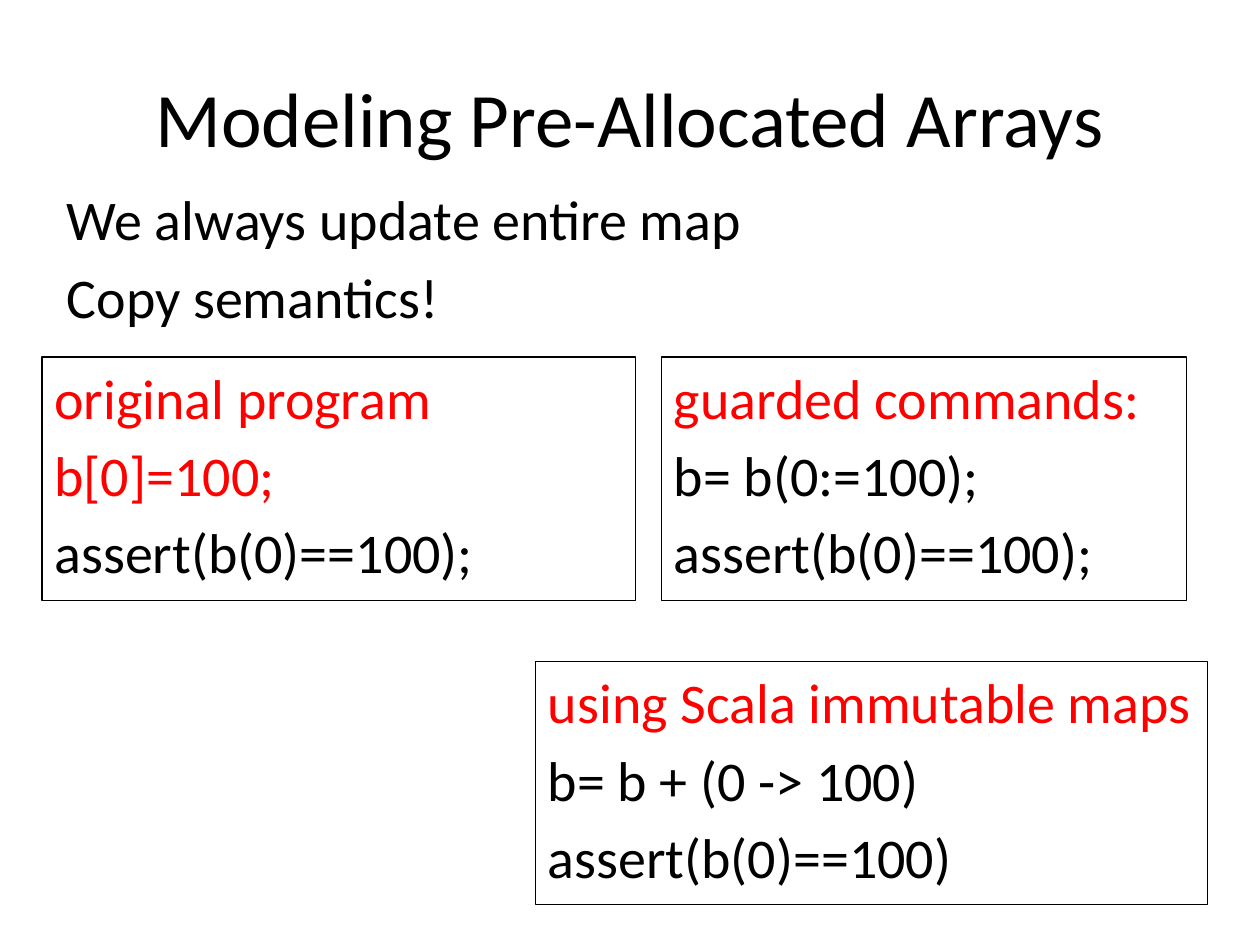
from pptx import Presentation
from pptx.dml.color import RGBColor
from pptx.enum.shapes import MSO_SHAPE as Shape
from pptx.enum.text import MSO_ANCHOR as Anchor, PP_ALIGN as Align
from pptx.util import Pt

# Content: each line is (text, colour name)
TITLE = [("Modeling Pre-Allocated Arrays", "text")]
INTRO = [("We always update entire map", "text"), ("Copy semantics!", "text")]
CODE_BOXES = [  # left, top, width, lines
    (378, 204, 300, [("guarded commands:", "accent"),
                     ("b= b(0:=100);", "text"),
                     ("assert(b(0)==100);", "text")]),
    (24, 204, 339, [("original program", "accent"),
                    ("b[0]=100;", "accent"),
                    ("assert(b(0)==100);", "text")]),
    (306, 378, 384, [("using Scala immutable maps", "accent"),
                     ("b= b + (0 -> 100)", "text"),
                     ("assert(b(0)==100)", "text")]),
]
CODE_HEIGHT = 139

THEME = {
    "font": "Calibri",
    "title_size": 44,
    "body_size": 32,
    "space_before": 5.8,
    "line_width": 0.75,
    "text": RGBColor(0, 0, 0),
    "accent": RGBColor(255, 0, 0),
}


def write_lines(shape, lines, size, space=0, align=Align.LEFT, anchor=Anchor.TOP):
    frame = shape.text_frame
    frame.word_wrap = True
    frame.vertical_anchor = anchor
    frame.text = "\n".join(text for text, _ in lines)
    for paragraph, (_, colour) in zip(frame.paragraphs, lines):
        paragraph.alignment = align
        paragraph.space_before = Pt(space)
        font = paragraph.runs[0].font
        font.name = THEME["font"]
        font.size = Pt(size)
        font.color.rgb = THEME[colour]


def add_code_box(slide, left, top, width, lines):
    shape = slide.shapes.add_shape(
        Shape.RECTANGLE, Pt(left), Pt(top), Pt(width), Pt(CODE_HEIGHT))
    shape.shadow.inherit = False
    shape.fill.background()
    shape.line.color.rgb = THEME["text"]
    shape.line.width = Pt(THEME["line_width"])
    write_lines(shape, lines, THEME["body_size"], THEME["space_before"])


def main():
    presentation = Presentation()
    presentation.slide_width, presentation.slide_height = Pt(720), Pt(540)
    slide = presentation.slides.add_slide(presentation.slide_layouts[6])

    # Title and introduction
    title = slide.shapes.add_textbox(Pt(18), Pt(21.6), Pt(684), Pt(90))
    write_lines(title, TITLE, THEME["title_size"], align=Align.CENTER,
                anchor=Anchor.MIDDLE)
    intro = slide.shapes.add_textbox(Pt(31), Pt(102), Pt(635), Pt(90))
    write_lines(intro, INTRO, THEME["body_size"], THEME["space_before"])

    # Framed code boxes
    for box in CODE_BOXES:
        add_code_box(slide, *box)

    presentation.save("out.pptx")


if __name__ == "__main__":
    main()
